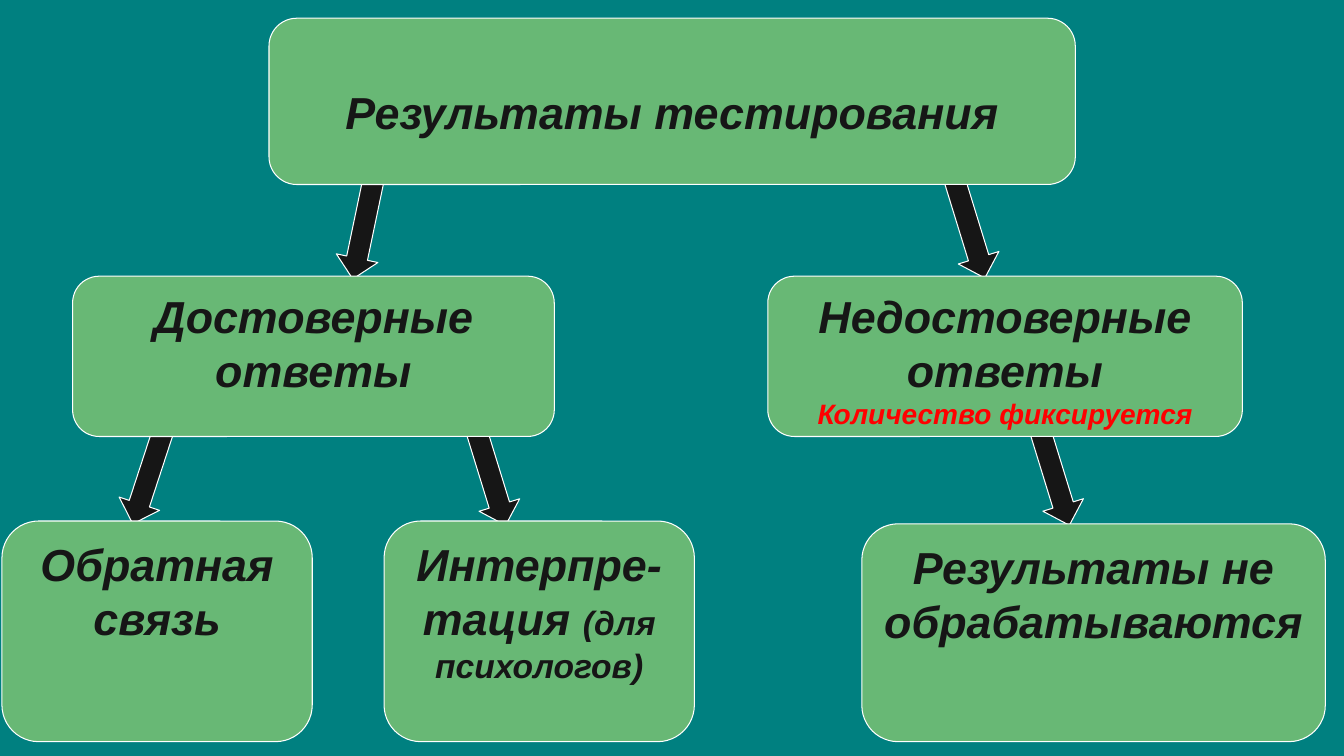
from pptx import Presentation
from pptx.dml.color import RGBColor
from pptx.enum.shapes import MSO_SHAPE
from pptx.enum.text import MSO_ANCHOR, PP_ALIGN
from pptx.util import Cm, Pt

ROUNDED = MSO_SHAPE.ROUNDED_RECTANGLE
ARROW = MSO_SHAPE.DOWN_ARROW
TOP = MSO_ANCHOR.TOP
CENTER = PP_ALIGN.CENTER

COLORS = {
    "background": "008080",
    "box": "68B875",
    "dark": "161616",
    "outline": "FFFFFF",
    "accent": "FF0000",
}
FONT = {"name": "Arial", "bold": True, "italic": True}


def color(name):
    return RGBColor.from_string(COLORS[name])


def add_outlined(kind, position, fill):
    shape = page.shapes.add_shape(kind, *(Cm(length) for length in position))
    shape.shadow.inherit = False
    shape.fill.solid()
    shape.fill.fore_color.rgb = color(fill)
    shape.line.color.rgb = color("outline")
    shape.line.width = Pt(0.75)
    return shape


deck = Presentation()
deck.slide_width, deck.slide_height = Cm(33.87), Cm(19.05)
page = deck.slides.add_slide(deck.slide_layouts[6])
page.background.fill.solid()
page.background.fill.fore_color.rgb = color("background")

# Left, top, height and rotation of each arrow
ARROW_WIDTH = 1.07
arrows = [
    (8.64, 4.27, 2.79, 11.8),
    (3.3, 10.13, 3.15, 18.1),
    (11.73, 10.06, 3.25, 342.9),
    (25.93, 10.01, 3.3, 342.9),
    (23.8, 3.78, 3.3, 342.9),
]
for left, top, height, rotation in arrows:
    arrow = add_outlined(ARROW, (left, top, ARROW_WIDTH, height), "dark")
    arrow.rotation = rotation

# Position, top margin, then paragraphs made of (text, size, color) spans
MARGIN = 0.13
boxes = [
    ((1.83, 6.96, 12.14, 4.04), MARGIN, [[("Достоверные ответы", 32, "dark")]]),
    ((19.35, 6.96, 11.96, 4.04), MARGIN, [
        [("Недостоверные ответы", 32, "dark")],
        [("Количество фиксируется", 20, "accent")],
    ]),
    ((6.78, 0.46, 20.32, 4.19), 1.48, [[("Результаты тестирования", 32, "dark")]]),
    ((21.72, 13.2, 11.68, 5.49), MARGIN, [[("Результаты не обрабатываются", 32, "dark")]]),
    ((0.05, 13.13, 7.82, 5.56), MARGIN, [[("Обратная связь", 32, "dark")]]),
    ((9.68, 13.13, 7.82, 5.56), MARGIN, [
        [("Интерпре-", 32, "dark")],
        [("тация ", 32, "dark"), ("(для психологов)", 24, "dark")],
    ]),
]
for position, margin_top, paragraphs in boxes:
    frame = add_outlined(ROUNDED, position, "box").text_frame
    frame.word_wrap = True
    frame.vertical_anchor = TOP
    frame.margin_top = Cm(margin_top)
    for index, spans in enumerate(paragraphs):
        para = frame.add_paragraph() if index else frame.paragraphs[0]
        para.alignment = CENTER
        for text, size, shade in spans:
            span = para.add_run()
            span.text = text
            for attribute, value in FONT.items():
                setattr(span.font, attribute, value)
            span.font.size = Pt(size)
            span.font.color.rgb = color(shade)

deck.save("out.pptx")
